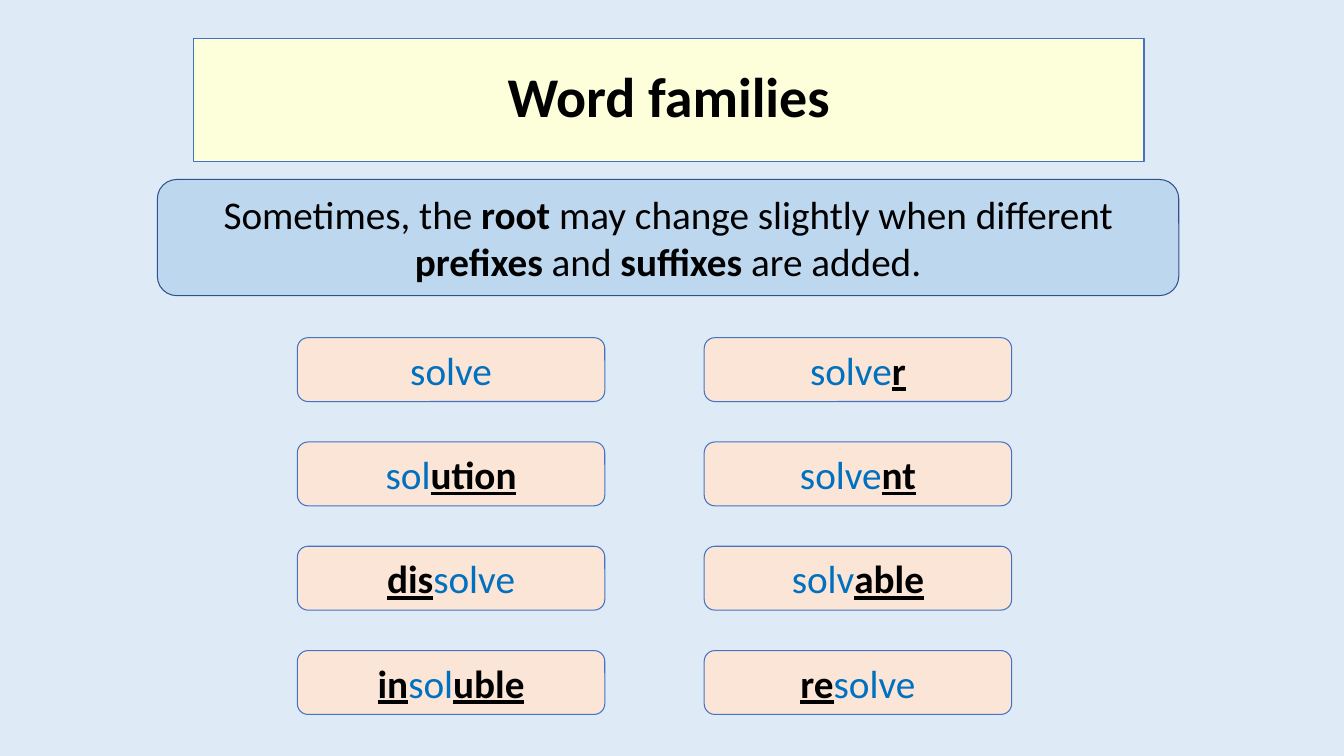
import pptx
import pptx.util
from pptx.dml.color import RGBColor
from pptx.enum.shapes import MSO_SHAPE
from pptx.enum.text import MSO_ANCHOR, PP_ALIGN

Pt = pptx.util.Pt

BLACK = RGBColor(0x00, 0x00, 0x00)
ROOT_BLUE = RGBColor(0x00, 0x70, 0xC0)
BACKGROUND = RGBColor(0xDE, 0xEB, 0xF7)
CREAM = RGBColor(0xFD, 0xFE, 0xDA)
SKY = RGBColor(0xBD, 0xD7, 0xEE)
PEACH = RGBColor(0xFB, 0xE5, 0xD6)
LINE_BLUE = RGBColor(0x44, 0x72, 0xC4)
LINE_NAVY = RGBColor(0x2F, 0x52, 0x8F)

# Run styles: colour, bold, underline
PLAIN = (BLACK, False, False)
BOLD = (BLACK, True, False)
ROOT = (ROOT_BLUE, False, False)
AFFIX = (BLACK, True, True)

TITLE = [("Word families", BOLD)]
RULE = [
    ("Sometimes, the ", PLAIN),
    ("root ", BOLD),
    ("may change slightly when different ", PLAIN),
    ("prefixes ", BOLD),
    ("and ", PLAIN),
    ("suffixes", BOLD),
    (" are added.", PLAIN),
]
WORD_ROWS = [
    ([("solve", ROOT)], [("solve", ROOT), ("r", AFFIX)]),
    ([("sol", ROOT), ("ution", AFFIX)], [("solve", ROOT), ("nt", AFFIX)]),
    ([("dis", AFFIX), ("solve", ROOT)], [("solv", ROOT), ("able", AFFIX)]),
    ([("in", AFFIX), ("sol", ROOT), ("uble", AFFIX)], [("re", AFFIX), ("solve", ROOT)]),
]

CARD_LEFT, CARD_TOP = 212.4, 241.2
CARD_W, CARD_H = 219.6, 45.6
COLUMN_STEP, ROW_STEP = 290.6, 74.5


def add_box(s, kind, box, fill, line, runs, size=28):
    sp = s.shapes.add_shape(kind, *(Pt(v) for v in box))
    sp.shadow.inherit = False
    sp.fill.solid()
    sp.fill.fore_color.rgb = fill
    sp.line.color.rgb = line
    sp.line.width = Pt(0.75)
    tf = sp.text_frame
    tf.word_wrap = True
    tf.vertical_anchor = MSO_ANCHOR.MIDDLE
    p = tf.paragraphs[0]
    p.alignment = PP_ALIGN.CENTER
    for text, (color, bold, underline) in runs:
        r = p.add_run()
        r.text = text
        r.font.name = "Calibri"
        r.font.size = Pt(size)
        r.font.color.rgb = color
        r.font.bold = bold
        r.font.underline = underline
    return sp


def main():
    prs = pptx.Presentation()
    prs.slide_width, prs.slide_height = Pt(960), Pt(540)
    s = prs.slides.add_slide(prs.slide_layouts[6])
    s.background.fill.solid()
    s.background.fill.fore_color.rgb = BACKGROUND

    title = add_box(s, MSO_SHAPE.RECTANGLE, (138.2, 27.4, 679, 87.8),
                    CREAM, LINE_BLUE, TITLE, size=40)
    title.text_frame.paragraphs[0].line_spacing = 0.9
    add_box(s, MSO_SHAPE.ROUNDED_RECTANGLE, (112.4, 128.2, 729.6, 83),
            SKY, LINE_NAVY, RULE)

    for row, words in enumerate(WORD_ROWS):
        for column, word in enumerate(words):
            left = CARD_LEFT + column * COLUMN_STEP
            top = CARD_TOP + row * ROW_STEP
            add_box(s, MSO_SHAPE.ROUNDED_RECTANGLE, (left, top, CARD_W, CARD_H),
                    PEACH, LINE_BLUE, word)

    prs.save("out.pptx")


if __name__ == "__main__":
    main()
